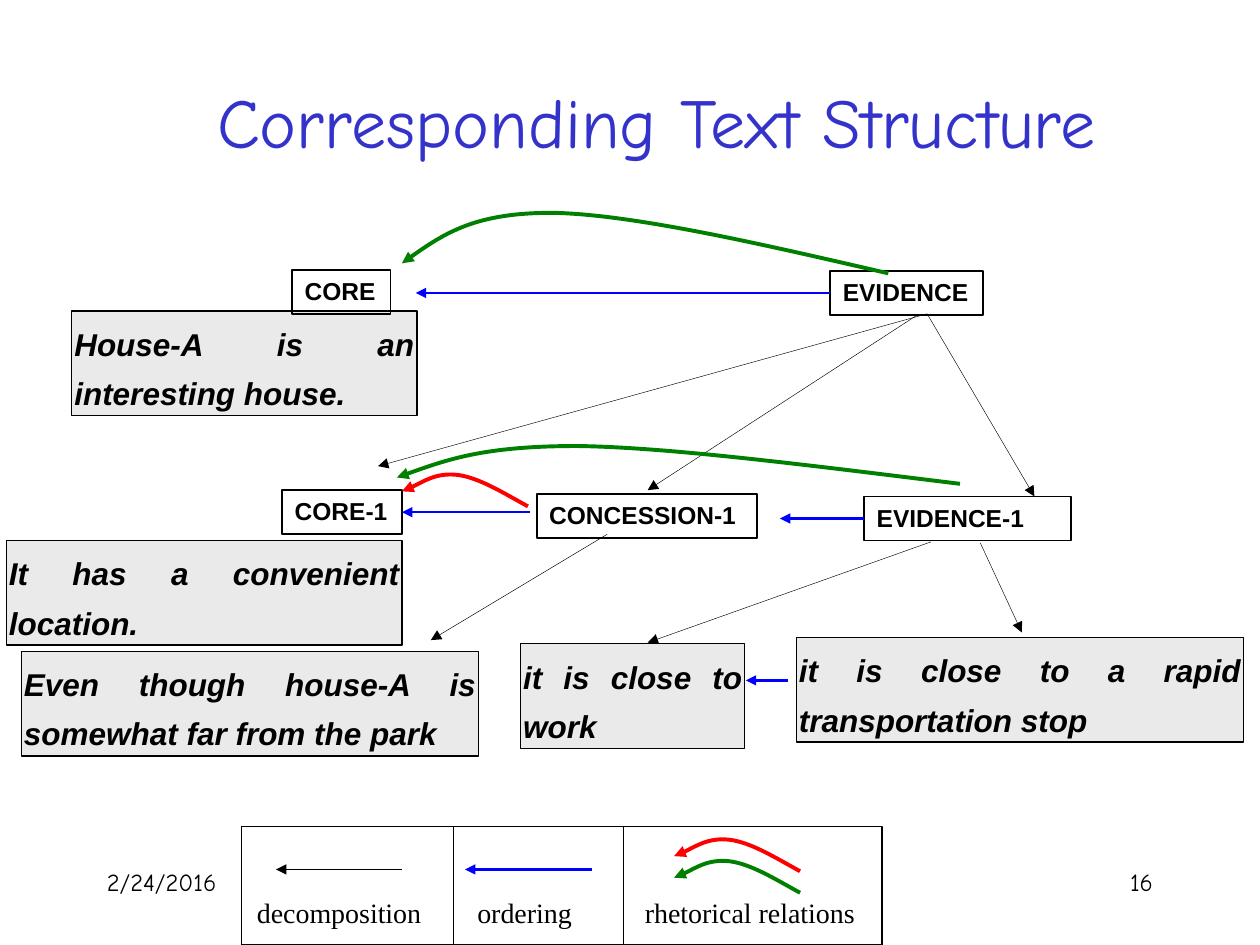
from lxml import etree
from pptx import Presentation
from pptx.dml.color import RGBColor
from pptx.enum.shapes import MSO_CONNECTOR, MSO_SHAPE
from pptx.enum.text import MSO_ANCHOR, MSO_AUTO_SIZE, PP_ALIGN
from pptx.oxml.ns import qn
from pptx.util import Pt

STRAIGHT = MSO_CONNECTOR.STRAIGHT
RECTANGLE = MSO_SHAPE.RECTANGLE
TOP, MIDDLE = MSO_ANCHOR.TOP, MSO_ANCHOR.MIDDLE
FIT_SHAPE = MSO_AUTO_SIZE.SHAPE_TO_FIT_TEXT
LEFT, CENTER, RIGHT, JUSTIFY = PP_ALIGN.LEFT, PP_ALIGN.CENTER, PP_ALIGN.RIGHT, PP_ALIGN.JUSTIFY
LEFT_SIDE, RIGHT_SIDE = 1, 3

COLORS = {
    "text": "000000",
    "title": "3333CC",
    "sentence": "EAEAEA",
    "legend": "FFFFFF",
    "ordering": "0000FF",
    "evidence": "008000",
    "concession": "FF0000",
}

TITLE = "Corresponding Text Structure"
FOOTERS = [("2/24/2016", 54, LEFT), ("16", 516, RIGHT)]

SENTENCE_HEIGHT = 59.8
SENTENCES = [
    ("House-A is an interesting house.", 41, 177.8, 197.3),
    ("It has a convenient location.", 3.6, 308.9, 226.1),
    ("Even though house-A is somewhat far from the park", 12.2, 372.2, 261.4),
    ("it is close to work", 297.4, 367.9, 128.2),
    ("it is close to a rapid transportation stop", 455, 364.3, 255.6),
]

NODE_HEIGHT = 25.2
NODES = [
    ("EVIDENCE", 474.5, 154.8, 87.1, False),
    ("CORE", 167, 154.1, 56.2, False),
    ("EVIDENCE-1", 493.9, 283.7, 118.1, True),
    ("CONCESSION-1", 306.7, 282.2, 126, True),
    ("CORE-1", 161.3, 280.1, 68.4, False),
]

DECOMPOSITIONS = [
    ((530.6, 180.7), (591.1, 283.7)),
    ((529.9, 179.3), (216, 266.4)),
    ((524.2, 180), (370.1, 280.1)),
    ((532.1, 309.6), (370.1, 367.2)),
    ((560.2, 310.3), (583.9, 361.4)),
    ((347, 305.3), (246.2, 365.8)),
    ((229.7, 496.8), (157.7, 496.8)),
]
NODE_ORDERINGS = [("EVIDENCE", 237.6), ("EVIDENCE-1", 445.7)]
CORE_ORDERING_START = 303.1
ORDERINGS = [((450, 388.8), (426.2, 388.8)), ((338.4, 496.8), (265.7, 496.8))]

ARC = [(301.7, 289.4), (287.3, 281.5), (273.6, 272.9), (261.4, 271.4),
       (249.1, 270), (234.7, 279.4), (229.7, 280.8)]
RELATIONS = [
    ("evidence", [(507.6, 156.2), (436.3, 139.7), (364.3, 123.1), (318.2, 121.7),
                  (272.2, 121), (250.6, 135.4), (229.7, 150.5)], (0, 0)),
    ("evidence", [(548.6, 276.5), (465.8, 266.4), (383, 255.6), (329.8, 254.9),
                  (275.8, 254.9), (251.3, 264.2), (226.8, 272.9)], (0, 0)),
    ("concession", ARC, (0, 0)),
    ("concession", ARC, (155.5, 208.5)),
    ("evidence", ARC, (155.5, 220.8)),
]

LEGEND_BOX = (138.2, 472.3, 365.8, 67.7)
LEGEND_DIVIDERS = [259.2, 356.4]
LEGEND_LABELS = [("decomposition", 139.7, 108.7), ("ordering", 265.7, 69.1),
                 ("rhetorical relations", 361.4, 135.4)]


def color(name):
    return RGBColor.from_string(COLORS[name])


def write(shape, text, font_name, size, align=LEFT, color_name="text"):
    paragraph = shape.text_frame.paragraphs[0]
    paragraph.text = text
    paragraph.alignment = align
    paragraph.font.name = font_name
    paragraph.font.size = Pt(size)
    paragraph.font.color.rgb = color(color_name)
    return paragraph


def add_text(slide, text, box, font_name, size, align=LEFT, wrap=True):
    shape = slide.shapes.add_textbox(*map(Pt, box))
    shape.text_frame.word_wrap = wrap
    write(shape, text, font_name, size, align)


def add_box(slide, box, line_width, fill=None):
    shape = slide.shapes.add_shape(RECTANGLE, *map(Pt, box))
    shape.shadow.inherit = False
    if fill:
        shape.fill.solid()
        shape.fill.fore_color.rgb = color(fill)
    else:
        shape.fill.background()
    shape.line.color.rgb = color("text")
    shape.line.width = Pt(line_width)
    return shape


def write_box(shape, text, size, align=LEFT, wrap=True):
    frame = shape.text_frame
    frame.word_wrap = wrap
    frame.vertical_anchor = TOP
    frame.auto_size = FIT_SHAPE
    paragraph = write(shape, text, "Arial", size, align)
    paragraph.font.bold = True
    return paragraph


def style_line(shape, color_name, width, arrow=True):
    shape.line.color.rgb = color(color_name)
    shape.line.width = Pt(width)
    if arrow:
        outline = shape.line._get_or_add_ln()
        etree.SubElement(outline, qn("a:tailEnd"), type="triangle")


def add_line(slide, start, end, color_name, width, arrow=True):
    connector = slide.shapes.add_connector(STRAIGHT, *map(Pt, start + end))
    style_line(connector, color_name, width, arrow)
    etree.SubElement(connector._element.spPr, qn("a:effectLst"))
    return connector


def add_curve(slide, points, color_name):
    vertices = [(Pt(x), Pt(y)) for x, y in points]
    builder = slide.shapes.build_freeform(*vertices[0])
    builder.add_line_segments(vertices[1:], close=False)
    shape = builder.convert_to_shape()
    shape.shadow.inherit = False
    shape.fill.background()
    style_line(shape, color_name, 2.25)
    segments = list(shape._element.iter(qn("a:lnTo")))
    for first in range(0, len(segments), 3):
        curve = etree.Element(qn("a:cubicBezTo"))
        segments[first].addprevious(curve)
        for segment in segments[first:first + 3]:
            curve.append(segment[0])
            segment.getparent().remove(segment)


def main():
    presentation = Presentation()
    presentation.slide_width, presentation.slide_height = Pt(720), Pt(540)
    slide = presentation.slides.add_slide(presentation.slide_layouts[5])

    title = slide.shapes.title
    title.left, title.top, title.width, title.height = map(Pt, (60, 42, 630, 54))
    title.text_frame.vertical_anchor = MIDDLE
    write(title, TITLE, "Comic Neue", 40, CENTER, "title")

    for text, left, align in FOOTERS:
        add_text(slide, text, (left, 492, 150, 36), "Comic Neue", 14, align)
    add_box(slide, LEGEND_BOX, 0.75, "legend")

    for text, left, top, width in SENTENCES:
        shape = add_box(slide, (left, top, width, SENTENCE_HEIGHT), 0.75, "sentence")
        frame = shape.text_frame
        frame.margin_left = frame.margin_right = Pt(1.5)
        frame.margin_top = frame.margin_bottom = Pt(1.5)
        paragraph = write_box(shape, text, 18, JUSTIFY)
        paragraph.line_spacing = 1.3
        paragraph.font.italic = True

    nodes = {}
    for text, left, top, width, wrap in NODES:
        nodes[text] = add_box(slide, (left, top, width, NODE_HEIGHT), 1)
        write_box(nodes[text], text, 14, wrap=wrap)

    for start, end in DECOMPOSITIONS:
        add_line(slide, start, end, "text", 0.25)
    for start, end in ORDERINGS:
        add_line(slide, start, end, "ordering", 1.5)
    for name, end_x in NODE_ORDERINGS:
        node = nodes[name]
        middle = (node.top + node.height / 2) / Pt(1)
        connector = add_line(slide, (node.left.pt, middle), (end_x, middle), "ordering", 1.5)
        connector.begin_connect(node, LEFT_SIDE)
    core = nodes["CORE-1"]
    middle = (core.top + core.height / 2) / Pt(1)
    connector = add_line(slide, (CORE_ORDERING_START, middle),
                         ((core.left + core.width) / Pt(1), middle), "ordering", 1.5)
    connector.end_connect(core, RIGHT_SIDE)

    for color_name, points, (shift_x, shift_y) in RELATIONS:
        add_curve(slide, [(x + shift_x, y + shift_y) for x, y in points], color_name)

    for text, left, width in LEGEND_LABELS:
        add_text(slide, text, (left, 508.3, width, 26.6), "Times New Roman", 16, wrap=False)
    legend_top, legend_height = LEGEND_BOX[1], LEGEND_BOX[3]
    for x in LEGEND_DIVIDERS:
        add_line(slide, (x, legend_top), (x, legend_top + legend_height), "text", 0.75, False)

    presentation.save("out.pptx")


if __name__ == "__main__":
    main()
